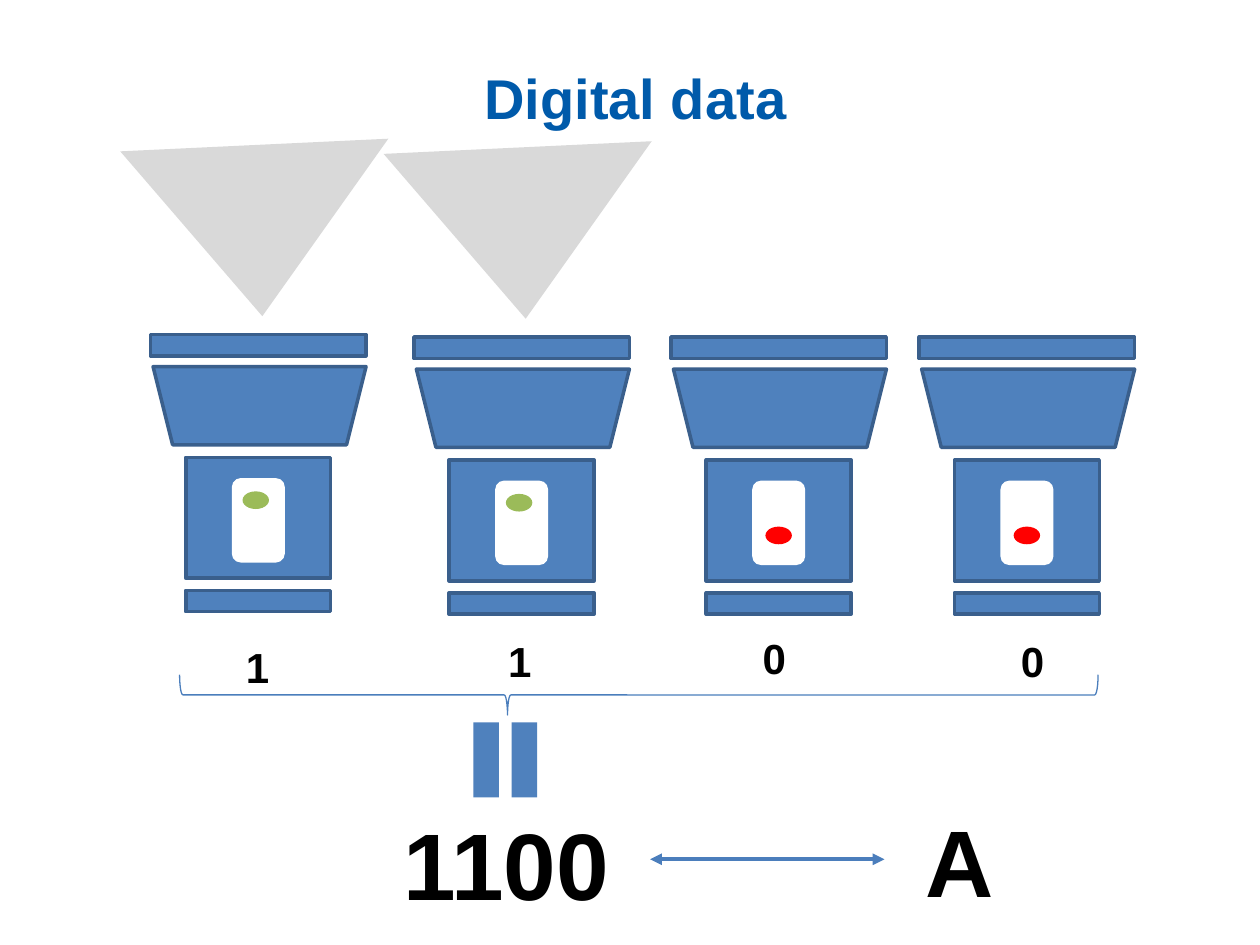
from typing import NamedTuple

from lxml import etree
from pptx import Presentation
from pptx.dml.color import RGBColor
from pptx.enum.shapes import MSO_CONNECTOR, MSO_SHAPE
from pptx.enum.text import MSO_ANCHOR, MSO_AUTO_SIZE, PP_ALIGN
from pptx.oxml.ns import qn
from pptx.util import Inches, Pt

RECT, ROUND = MSO_SHAPE.RECTANGLE, MSO_SHAPE.ROUNDED_RECTANGLE
TRAP, OVAL = MSO_SHAPE.TRAPEZOID, MSO_SHAPE.OVAL
CONE, BRACE = MSO_SHAPE.ISOSCELES_TRIANGLE, MSO_SHAPE.RIGHT_BRACE
EQUAL = MSO_SHAPE.MATH_EQUAL
LINE = MSO_CONNECTOR.STRAIGHT
MIDDLE, CENTER = MSO_ANCHOR.MIDDLE, PP_ALIGN.CENTER
FIT = MSO_AUTO_SIZE.SHAPE_TO_FIT_TEXT

NAVY = RGBColor(0x00, 0x5A, 0xAA)
BLUE = RGBColor(0x4F, 0x81, 0xBD)
EDGE = RGBColor(0x3A, 0x5F, 0x8C)
STROKE = RGBColor(0x4B, 0x7E, 0xBC)
GREEN = RGBColor(0x9B, 0xBB, 0x59)
RED = RGBColor(0xFF, 0x00, 0x00)
GREY = RGBColor(0xD9, 0xD9, 0xD9)
WHITE = RGBColor(0xFF, 0xFF, 0xFF)
BLACK = RGBColor(0x00, 0x00, 0x00)


class Lamp(NamedTuple):
    """A torch: its centre line, drop, and the bit it shows."""
    x: float
    drop: float
    bit: str
    label_x: float
    label_y: float


class Part(NamedTuple):
    """A lamp part, placed by the height of its centre."""
    kind: int
    y: float
    width: float
    height: float
    fill: RGBColor
    edge: RGBColor | None = None
    turn: float = 0
    dx: float = 0


LAMPS = [
    Lamp(2.05, 0, "1", 1.85, 5.04),
    Lamp(4.14, 0.02, "1", 3.93, 4.99),
    Lamp(6.18, 0.02, "0", 5.95, 4.97),
    Lamp(8.15, 0.02, "0", 8.0, 4.99),
]
BODY = [
    Part(RECT, 4.77, 1.15, 0.17, BLUE, EDGE),
    Part(RECT, 4.11, 1.15, 0.96, BLUE, EDGE),
    Part(TRAP, 3.22, 1.69, 0.62, BLUE, EDGE, 180, 0.01),
    Part(RECT, 2.74, 1.71, 0.17, BLUE, EDGE),
    Part(ROUND, 4.13, 0.42, 0.67, WHITE),
]
STATES = {
    "1": [Part(OVAL, 3.97, 0.21, 0.14, GREEN, dx=-0.02),
          Part(CONE, 1.83, 2.13, 1.36, GREY, turn=177.3)],
    "0": [Part(OVAL, 4.23, 0.21, 0.14, RED)],
}


def draw_part(shapes, part: Part, x: float, drop: float = 0):
    shape = shapes.add_shape(
        part.kind,
        Inches(x + part.dx - part.width / 2),
        Inches(part.y + drop - part.height / 2),
        Inches(part.width), Inches(part.height))
    shape.shadow.inherit = False
    shape.rotation = part.turn
    shape.fill.solid()
    shape.fill.fore_color.rgb = part.fill
    if part.edge is None:
        shape.line.fill.background()
    else:
        shape.line.color.rgb = part.edge
        shape.line.width = Pt(2)
    return shape


def add_run(frame, text: str, size: float, color: RGBColor) -> None:
    para = frame.paragraphs[0]
    para.alignment = CENTER
    run = para.add_run()
    run.text = text
    font = run.font
    font.name, font.size, font.bold = "Arial", Pt(size), True
    font.color.rgb = color


def add_label(slide, text: str, x: float, y: float,
              width: float, height: float, size: float) -> None:
    box = slide.shapes.add_textbox(
        Inches(x), Inches(y), Inches(width), Inches(height))
    frame = box.text_frame
    frame.word_wrap = False
    frame.auto_size = FIT
    frame.vertical_anchor = MIDDLE
    add_run(frame, text, size, BLACK)


def draw_lamp(slide, lamp: Lamp) -> None:
    group = slide.shapes.add_group_shape()
    for part in BODY + STATES[lamp.bit]:
        draw_part(group.shapes, part, lamp.x, lamp.drop)
    add_label(slide, lamp.bit, lamp.label_x, lamp.label_y, 0.39, 0.5, 24)


def draw_title(slide) -> None:
    title = slide.shapes.title
    title.left, title.top = Inches(0.05), Inches(0)
    title.width, title.height = Inches(9.99), Inches(1.39)
    frame = title.text_frame
    frame.margin_top = Inches(0.2)
    frame.vertical_anchor = MIDDLE
    add_run(frame, "Digital data", 32, NAVY)


def draw_arrow(slide) -> None:
    arrow = slide.shapes.add_connector(
        LINE, Inches(5.16), Inches(6.82), Inches(7.02), Inches(6.82))
    arrow.line.color.rgb = STROKE
    arrow.line.width = Pt(2.25)
    stroke = arrow.line._get_or_add_ln()
    for end in ("a:headEnd", "a:tailEnd"):
        etree.SubElement(stroke, qn(end), type="triangle")
    etree.SubElement(arrow._element.spPr, qn("a:effectLst"))


def draw_brace(slide) -> None:
    brace = slide.shapes.add_shape(
        BRACE, Inches(4.91), Inches(1.87), Inches(0.32), Inches(7.29))
    brace.shadow.inherit = False
    brace.rotation = 90
    brace.adjustments[0] = 0.083
    brace.adjustments[1] = 0.643
    brace.fill.background()
    brace.line.color.rgb = STROKE
    brace.line.width = Pt(0.75)


def main() -> None:
    deck = Presentation()
    deck.slide_width, deck.slide_height = Inches(10), Inches(7.5)
    slide = deck.slides.add_slide(deck.slide_layouts[5])
    draw_title(slide)

    # Four lamps, one for each bit
    for lamp in LAMPS:
        draw_lamp(slide, lamp)

    # The bits together stand for a letter
    draw_brace(slide)
    draw_part(slide.shapes, Part(EQUAL, 6.03, 0.81, 0.86, BLUE, turn=90), 4.01)
    add_label(slide, "1100", 3.1, 6.34, 1.84, 1.01, 54)
    draw_arrow(slide)
    add_label(slide, "A", 7.24, 6.32, 0.75, 1.01, 54)

    deck.save("out.pptx")


if __name__ == "__main__":
    main()
